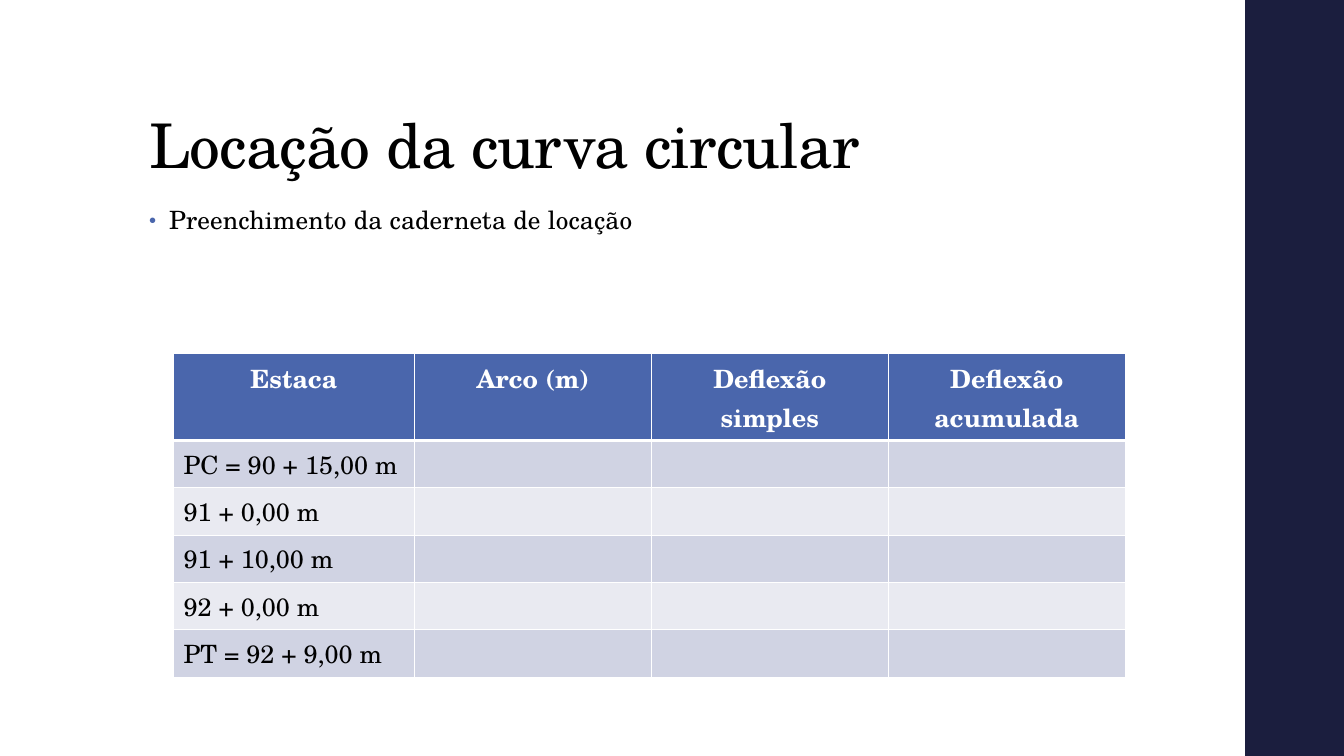
from pptx import Presentation
from pptx.dml.color import RGBColor
from pptx.enum.shapes import MSO_SHAPE
from pptx.enum.text import MSO_ANCHOR, PP_ALIGN
from pptx.oxml.ns import qn
from pptx.util import Inches, Pt
from lxml.etree import SubElement

FONT = "TeX Gyre Schola"
BLUE, NAVY, WHITE, BLACK = "4A66AC", "1B1E3E", "FFFFFF", "000000"
BANDS = ("D0D3E3", "E9EAF1")
LEFT = 1.38

HEADERS = ["Estaca", "Arco (m)", "Deflexão simples", "Deflexão acumulada"]
STATIONS = ["PC = 90 + 15,00 m", "91 + 0,00 m", "91 + 10,00 m",
            "92 + 0,00 m", "PT = 92 + 9,00 m"]
COLUMN_WIDTHS = [2.39, 2.35, 2.35, 2.35]
HEADER_HEIGHT, ROW_HEIGHT = 0.86, 0.47


def rgb(color):
    return RGBColor.from_string(color)


def write(tf, text, size=18, color=BLACK, bold=False, align=None,
          line_spacing=None, space_after=None, tracking=None, bullet=None):
    """Fill the first paragraph; tracking is in hundredths of a point."""
    p = tf.paragraphs[0]
    if bullet:
        add_bullet(p, bullet)
    p.alignment = align
    p.line_spacing = line_spacing
    if space_after is not None:
        p.space_after = Pt(space_after)
    r = p.add_run()
    r.text = text
    r.font.name = FONT
    r.font.size = Pt(size)
    r.font.bold = bold
    r.font.color.rgb = rgb(color)
    if tracking is not None:
        r.font._element.set("spc", str(tracking))


def add_bullet(p, color):
    pPr = p._p.get_or_add_pPr()
    pPr.set("marL", str(Inches(0.2)))
    pPr.set("indent", str(-Inches(0.2)))
    SubElement(SubElement(pPr, qn("a:buClr")), qn("a:srgbClr"), val=color)
    SubElement(pPr, qn("a:buSzPct"), val="80000")
    SubElement(pPr, qn("a:buFont"), typeface="Arial")
    SubElement(pPr, qn("a:buChar"), char="•")


def add_text(s, text, left, top, width, height, anchor=MSO_ANCHOR.TOP, **style):
    sp = s.shapes.add_textbox(Inches(left), Inches(top), Inches(width), Inches(height))
    tf = sp.text_frame
    tf.word_wrap = True
    tf.vertical_anchor = anchor
    write(tf, text, **style)


def add_side_band(s, prs):
    width = Inches(0.98)
    sp = s.shapes.add_shape(MSO_SHAPE.RECTANGLE, prs.slide_width - width, 0,
                            width, prs.slide_height)
    sp.shadow.inherit = False
    sp.fill.solid()
    sp.fill.fore_color.rgb = rgb(NAVY)
    sp.line.fill.background()


def style_cell(cell, fill, top=1, bottom=1):
    """Borders go in before the fill, as the schema orders them."""
    tcPr = cell._tc.get_or_add_tcPr()
    for side, width in (("L", 1), ("R", 1), ("T", top), ("B", bottom)):
        ln = SubElement(tcPr, qn(f"a:ln{side}"), w=str(Pt(width)))
        SubElement(SubElement(ln, qn("a:solidFill")), qn("a:srgbClr"), val=WHITE)
    cell.fill.solid()
    cell.fill.fore_color.rgb = rgb(fill)


def add_field_book(s, left, top):
    heights = [HEADER_HEIGHT] + [ROW_HEIGHT] * len(STATIONS)
    table = s.shapes.add_table(len(heights), len(HEADERS), Inches(left), Inches(top),
                               Inches(sum(COLUMN_WIDTHS)), Inches(sum(heights))).table
    for column, width in zip(table.columns, COLUMN_WIDTHS):
        column.width = Inches(width)
    for row, height in zip(table.rows, heights):
        row.height = Inches(height)
    for c, header in enumerate(HEADERS):
        cell = table.cell(0, c)
        style_cell(cell, BLUE, bottom=3)
        write(cell.text_frame, header, color=WHITE, bold=True, align=PP_ALIGN.CENTER)
    for i, station in enumerate(STATIONS):
        for c in range(len(HEADERS)):
            style_cell(table.cell(i + 1, c), BANDS[i % 2], top=1 if i else 3)
        write(table.cell(i + 1, 0).text_frame, station)


def main():
    prs = Presentation()
    prs.slide_width, prs.slide_height = Inches(13.33), Inches(7.5)
    s = prs.slides.add_slide(prs.slide_layouts[6])
    add_side_band(s, prs)
    add_text(s, "Locação da curva circular", LEFT, 0.4, 10.6, 1.45,
             anchor=MSO_ANCHOR.BOTTOM, size=44, line_spacing=0.9, tracking=-50)
    add_text(s, "Preenchimento da caderneta de locação", LEFT, 2, 9.4, 4.76,
             line_spacing=0.95, space_after=2, tracking=10, bullet=BLUE)
    add_field_book(s, 1.72, 3.51)
    prs.save("out.pptx")


if __name__ == "__main__":
    main()
